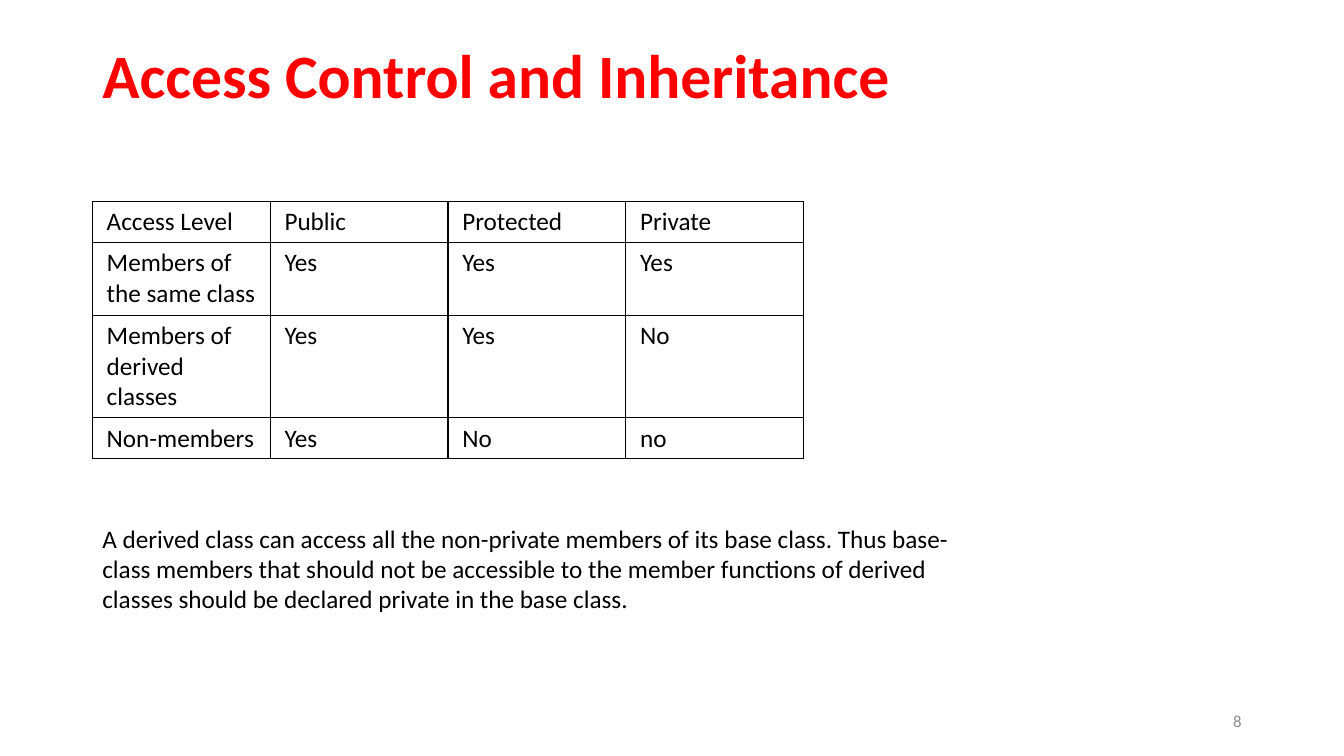
from lxml import etree
from pptx import Presentation, util as u
from pptx.dml.color import RGBColor
from pptx.enum import text
from pptx.oxml import ns

RED = RGBColor(0xFF, 0x00, 0x00)
BLACK = RGBColor(0x00, 0x00, 0x00)
GRAY = RGBColor(0x8C, 0x8C, 0x8C)

ACCESS = [
    ["Access Level", "Public", "Protected", "Private"],
    ["Members of the same class", "Yes", "Yes", "Yes"],
    ["Members of derived classes", "Yes", "Yes", "No"],
    ["Non-members", "Yes", "No", "no"],
]
ROW_HEIGHTS = [1.03, 1.83, 2.59, 1.03]
RULE = (
    "A derived class can access all the non-private members of its base class. "
    "Thus base-class members that should not be accessible to the member functions "
    "of derived classes should be declared private in the base class."
)


def apply_format(target, values):
    for name, value in values.items():
        setattr(target, name, value)


class SlideBuilder:
    FONT = "Calibri"
    BORDER = u.Pt(1)
    CELL = {
        "margin_left": u.Cm(0.36),
        "margin_right": u.Cm(0.36),
        "margin_top": u.Cm(0.13),
        "margin_bottom": u.Cm(0.13),
    }

    def __init__(self, slide):
        self.slide = slide

    def fill_text(self, frame, words, size, color, bold=False, **layout):
        paragraph = frame.paragraphs[0]
        apply_format(paragraph, layout)
        run = paragraph.add_run()
        run.text = words
        apply_format(run.font, {"name": self.FONT, "size": u.Pt(size), "bold": bold})
        run.font.color.rgb = color

    def add_text(self, box, words, size, color, anchor=text.MSO_ANCHOR.TOP, **style):
        frame = self.slide.shapes.add_textbox(*map(u.Cm, box)).text_frame
        apply_format(frame, {"word_wrap": True, "vertical_anchor": anchor})
        self.fill_text(frame, words, size, color, **style)

    def add_borders(self, cell, color):
        properties = cell._tc.get_or_add_tcPr()
        for position, side in enumerate(("a:lnL", "a:lnR", "a:lnT", "a:lnB")):
            line = etree.Element(ns.qn(side), w=str(self.BORDER))
            fill = etree.SubElement(line, ns.qn("a:solidFill"))
            etree.SubElement(fill, ns.qn("a:srgbClr"), val=str(color))
            properties.insert(position, line)

    def add_table(self, left, top, column_width, row_heights, rows, size, color):
        columns = len(rows[0])
        table = self.slide.shapes.add_table(
            len(rows), columns, u.Cm(left), u.Cm(top),
            u.Cm(column_width * columns), u.Cm(sum(row_heights)),
        ).table
        apply_format(table, {"first_row": False, "horz_banding": False})
        for column in table.columns:
            column.width = u.Cm(column_width)
        for row, height, entries in zip(table.rows, row_heights, rows):
            row.height = u.Cm(height)
            for cell, entry in zip(row.cells, entries):
                apply_format(cell, self.CELL)
                cell.fill.background()
                self.add_borders(cell, color)
                self.fill_text(cell.text_frame, entry, size, color)


def main():
    deck = Presentation()
    apply_format(deck, {"slide_width": u.Cm(33.87), "slide_height": u.Cm(19.05)})
    builder = SlideBuilder(deck.slides.add_slide(deck.slide_layouts[6]))
    builder.add_text((2.33, 1.01, 29.21, 3.68), "Access Control and Inheritance",
                     44, RED, bold=True, line_spacing=0.9)
    builder.add_table(2.33, 5.08, 4.48, ROW_HEIGHTS, ACCESS, 18, BLACK)
    builder.add_text((23.92, 17.66, 7.62, 1.01), "8", 12, GRAY,
                     anchor=text.MSO_ANCHOR.MIDDLE, alignment=text.PP_ALIGN.RIGHT)
    builder.add_text((2.33, 13.06, 22.68, 2.57), RULE, 18, BLACK)
    deck.save("out.pptx")


if __name__ == "__main__":
    main()
